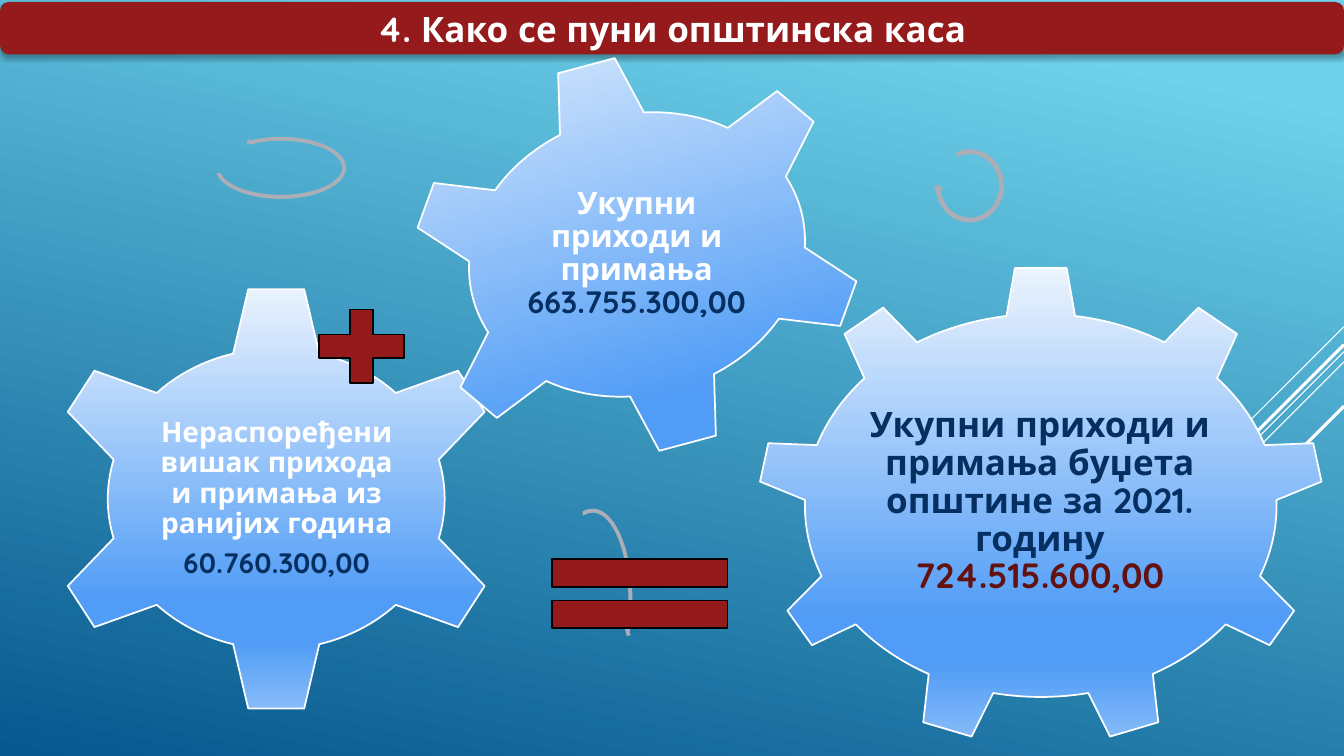
from lxml import etree
from pptx import Presentation
from pptx.dml.color import RGBColor
from pptx.enum.shapes import MSO_CONNECTOR, MSO_SHAPE
from pptx.enum.text import MSO_ANCHOR, MSO_AUTO_SIZE, PP_ALIGN
from pptx.oxml.ns import qn
from pptx.util import Inches, Pt

WIDTH, HEIGHT = Inches(13.33), Inches(7.5)
COLUMN, ROW = WIDTH / 100, HEIGHT / 100
TITLE_ONLY = 5
CENTER, MIDDLE = PP_ALIGN.CENTER, MSO_ANCHOR.MIDDLE
NO_AUTOFIT = MSO_AUTO_SIZE.NONE
STRAIGHT = MSO_CONNECTOR.STRAIGHT
BAR = MSO_SHAPE.ROUNDED_RECTANGLE
GEAR_6, GEAR_9 = MSO_SHAPE.GEAR_6, MSO_SHAPE.GEAR_9
ARC, LEFT_ARC = MSO_SHAPE.CIRCULAR_ARROW, MSO_SHAPE.LEFT_CIRCULAR_ARROW
PLUS, EQUAL = MSO_SHAPE.MATH_PLUS, MSO_SHAPE.MATH_EQUAL

FONT = "Quicksand"
WHITE, BLACK, NAVY = "FFFFFF", "000000", "052F61"
RED, MAROON, GRAY = "941A1B", "631212", "ABADB7"
SKY = [(10, "6ED2EB"), (100, "06588E")]
GEAR_BLUE = [(0, "ECF4FE"), (74, "509CF6"), (83, "509CF6"), (100, "8BBDF9")]

RAYS = [(43.2, 7.5, 0.75), (46.53, 24.45, 0.75), (47.87, 15.53, 0.75),
        (45.6, 14.33, 2.25), (53.73, 10.43, 2.25)]
GEARS = [
    (GEAR_9, (56.33, 35.2, 42.22, 63.33), 0, (64.28, 50.13, 26.18, 32.53), 25,
     [[("Укупни приходи и примања буџета општине за 2021. годину ", NAVY),
       ("724.515.600,00", MAROON)]]),
    (GEAR_6, (3.23, 37.6, 34.65, 56.8), 0, (11.7, 52, 17.78, 28), 20,
     [[("Нераспоређени вишак прихода и примања из ранијих година", WHITE)],
      [("60.760.300,00", NAVY)]]),
    (GEAR_6, (30.3, 7.2, 34.2, 52.93), 345, (38.03, 18.27, 18.68, 30.67), 22,
     [[("Укупни приходи и примања ", WHITE), ("663.755.300,00", NAVY)]]),
]
ARROWS = [
    (ARC, (40.95, 66.93, 6.3, 24.67), (0.047, 2.99, 25.464, 157.977, 0.055)),
    (ARC, (69.38, 19.33, 5.55, 10.53), (0.065, 4.3, 104.891, 148.378, 0.075)),
    (LEFT_ARC, (15.83, 17.73, 10.13, 8.93), (0.06, 3.941, 133.138, 105.082, 0.07)),
]
SIGNS = [(PLUS, (22.58, 39.2, 8.63, 13.2)), (EQUAL, (38.7, 70.8, 17.78, 15.47))]


def rgb(value):
    return RGBColor.from_string(value)


def place(columns, rows):
    return round(columns * COLUMN), round(rows * ROW)


class BudgetSlide:
    def __init__(self, deck):
        self.slide = deck.slides.add_slide(deck.slide_layouts[TITLE_ONLY])
        self.shapes = self.slide.shapes

    def gradient(self, fill, owner, stops, angle):
        fill.gradient()
        fill.gradient_angle = 360 - angle
        stop_list = owner.find(".//" + qn("a:gsLst"))
        for old_stop in list(stop_list):
            stop_list.remove(old_stop)
        for position, value in stops:
            stop = etree.SubElement(stop_list, qn("a:gs"), pos=str(position * 1000))
            etree.SubElement(stop, qn("a:srgbClr"), val=value)

    def background(self, stops, angle):
        self.gradient(self.slide.background.fill, self.slide.element, stops, angle)

    def ray(self, start_row, reach, weight):
        end_row = start_row + reach * COLUMN / ROW
        line = self.shapes.add_connector(
            STRAIGHT, *place(100, start_row), *place(100 - reach, end_row))
        line.line.color.rgb = rgb(WHITE)
        line.line.width = Pt(weight)
        etree.SubElement(line._element.spPr, qn("a:effectLst"))

    def shape(self, kind, box, fill=None, outline=None, adjustments=()):
        item = self.shapes.add_shape(kind, *place(*box[:2]), *place(*box[2:]))
        item.shadow.inherit = False
        if fill:
            item.fill.solid()
            item.fill.fore_color.rgb = rgb(fill)
        if outline:
            item.line.color.rgb = rgb(outline)
            item.line.width = Pt(1.25)
        else:
            item.line.fill.background()
        for index, value in enumerate(adjustments):
            item.adjustments[index] = value
        return item

    def set_text(self, frame, paragraphs, size, inset, spacing=1.0, after=0):
        frame.word_wrap = True
        frame.auto_size = NO_AUTOFIT
        frame.vertical_anchor = MIDDLE
        frame.margin_left = frame.margin_right = Inches(inset)
        frame.margin_top = frame.margin_bottom = Inches(inset)
        for index, runs in enumerate(paragraphs):
            paragraph = frame.add_paragraph() if index else frame.paragraphs[0]
            paragraph.alignment = CENTER
            paragraph.line_spacing = spacing
            paragraph.space_after = Pt(after)
            for text, color in runs:
                run = paragraph.add_run()
                run.text = text
                run.font.name = FONT
                run.font.size = Pt(size)
                run.font.bold = True
                run.font.color.rgb = rgb(color)

    def title(self, text, box):
        bar = self.shape(BAR, box, RED)
        effects = bar._element.spPr.find(qn("a:effectLst"))
        shadow = etree.SubElement(
            effects, qn("a:outerShdw"), blurRad=str(int(Pt(3.5))),
            dist=str(int(Pt(2.2))), dir="5400000", rotWithShape="0")
        shade = etree.SubElement(shadow, qn("a:srgbClr"), val=BLACK)
        etree.SubElement(shade, qn("a:alpha"), val="32000")
        heading = self.shapes.title
        heading.left, heading.top = place(*box[:2])
        heading.width, heading.height = place(*box[2:])
        bar._element.addnext(heading._element)
        self.set_text(heading.text_frame, [[(text, WHITE)]], 25, 0.05)

    def gear(self, kind, box, rotation, label_box, size, paragraphs):
        wheel = self.shape(kind, box, outline=WHITE)
        self.gradient(wheel.fill, wheel._element, GEAR_BLUE, 90)
        wheel.rotation = rotation
        label = self.shapes.add_textbox(*place(*label_box[:2]), *place(*label_box[2:]))
        self.set_text(label.text_frame, paragraphs, size, 0.03, 0.9, size * 0.35)


def main():
    deck = Presentation()
    deck.slide_width, deck.slide_height = WIDTH, HEIGHT
    budget = BudgetSlide(deck)
    budget.background(SKY, 102)
    for ray in RAYS:
        budget.ray(*ray)
    budget.title("4. Како се пуни општинска каса", (0, 0.27, 100, 6.93))
    for gear in GEARS:
        budget.gear(*gear)
    for kind, box, adjustments in ARROWS:
        budget.shape(kind, box, GRAY, adjustments=adjustments)
    for kind, box in SIGNS:
        budget.shape(kind, box, RED, BLACK)
    deck.save("out.pptx")


if __name__ == "__main__":
    main()
